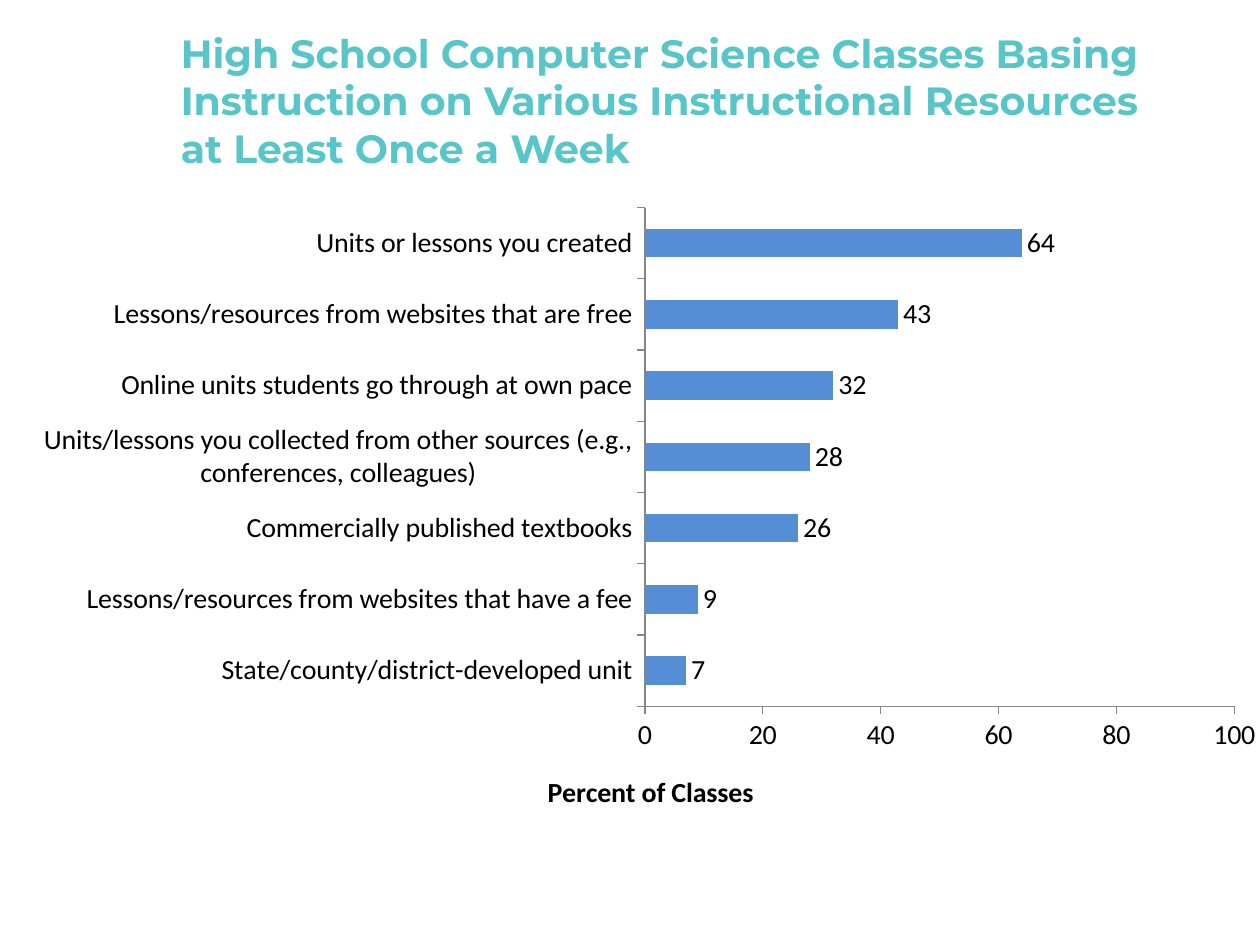
from lxml import etree
from pptx import Presentation
from pptx.chart.data import CategoryChartData
from pptx.dml.color import RGBColor
from pptx.enum.chart import XL_CHART_TYPE, XL_LABEL_POSITION, XL_TICK_MARK
from pptx.enum.text import MSO_ANCHOR, MSO_AUTO_SIZE, PP_ALIGN
from pptx.oxml.ns import qn
from pptx.util import Cm, Pt

TITLE = ("High School Computer Science Classes Basing Instruction on "
         "Various Instructional Resources at Least Once a Week")
AXIS_TITLE = "Percent of Classes"
RESOURCES = [  # top bar first
    ("Units or lessons you created", 64),
    ("Lessons/resources from websites that are free", 43),
    ("Online units students go through at own pace", 32),
    ("Units/lessons you collected from other sources "
     "(e.g., conferences, colleagues)", 28),
    ("Commercially published textbooks", 26),
    ("Lessons/resources from websites that have a fee", 9),
    ("State/county/district-developed unit", 7),
]
THEME = {
    "title": RGBColor(0x58, 0xC5, 0xC9),
    "text": RGBColor(0, 0, 0),
    "bar": RGBColor(0x55, 0x8E, 0xD5),
    "axis": RGBColor(0x86, 0x86, 0x86),
    "title_font": "Montserrat",
    "chart_font": "Calibri",
    "title_size": Pt(22.5),
    "chart_size": Pt(16),
}


def style_font(font, name, size, color, bold):
    font.name, font.size, font.bold = name, size, bold
    font.color.rgb = color


def set_layout(parent, position, **settings):
    """Give a chart part a manual layout, as fractions of the chart."""
    for old in parent.findall(qn("c:layout")):
        parent.remove(old)
    layout = etree.Element(qn("c:layout"))
    manual = etree.SubElement(layout, qn("c:manualLayout"))
    for tag, value in settings.items():
        etree.SubElement(manual, qn(f"c:{tag}")).set("val", str(value))
    parent.insert(position, layout)


def add_title(slide):
    title = slide.shapes.title
    title.left, title.top = Cm(3.39), Cm(0.43)
    title.width, title.height = Cm(20.75), Cm(3.18)
    frame = title.text_frame
    frame.text = TITLE
    frame.word_wrap = True
    frame.auto_size = MSO_AUTO_SIZE.NONE
    frame.vertical_anchor = MSO_ANCHOR.MIDDLE
    paragraph = frame.paragraphs[0]
    paragraph.alignment = PP_ALIGN.LEFT
    style_font(paragraph.runs[0].font, THEME["title_font"],
               THEME["title_size"], THEME["title"], True)


def style_axis(axis):
    axis.has_major_gridlines = False
    axis.major_tick_mark = XL_TICK_MARK.OUTSIDE
    axis.minor_tick_mark = XL_TICK_MARK.NONE
    axis.format.line.color.rgb = THEME["axis"]
    axis.format.line.width = Pt(0.75)


def add_resource_chart(slide):
    data = CategoryChartData()
    names, percents = zip(*reversed(RESOURCES))
    data.categories = names
    data.add_series("Series 1", percents)
    chart = slide.shapes.add_chart(
        XL_CHART_TYPE.BAR_CLUSTERED,
        Cm(-0.43), Cm(3.81), Cm(25.83), Cm(12.7), data).chart
    chart.has_legend = False
    chart.has_title = False
    chart_text = (THEME["chart_font"], THEME["chart_size"], THEME["text"])
    style_font(chart.font, *chart_text, False)

    plot = chart.plots[0]
    plot.gap_width = 150
    plot.vary_by_categories = False
    fill = plot.series[0].format.fill
    fill.solid()
    fill.fore_color.rgb = THEME["bar"]
    plot.has_data_labels = True
    plot.data_labels.show_value = True
    plot.data_labels.position = XL_LABEL_POSITION.OUTSIDE_END

    style_axis(chart.category_axis)
    values = chart.value_axis
    style_axis(values)
    values.minimum_scale, values.maximum_scale = 0, 100
    values.major_unit = 20
    frame = values.axis_title.text_frame
    frame.text = AXIS_TITLE
    style_font(frame.paragraphs[0].runs[0].font, *chart_text, True)

    plot_area = chart.element.find(".//" + qn("c:plotArea"))
    set_layout(plot_area, 0, layoutTarget="inner", xMode="edge", yMode="edge",
               x=0.52, y=0.03, w=0.46, h=0.8)
    axis_title = plot_area.find(".//" + qn("c:title"))
    set_layout(axis_title, 1, xMode="edge", yMode="edge", x=0.44, y=0.93)


def main():
    deck = Presentation()
    deck.slide_width, deck.slide_height = Cm(25.4), Cm(19.05)
    slide = deck.slides.add_slide(deck.slide_layouts[5])
    add_title(slide)
    add_resource_chart(slide)
    deck.save("out.pptx")


if __name__ == "__main__":
    main()
